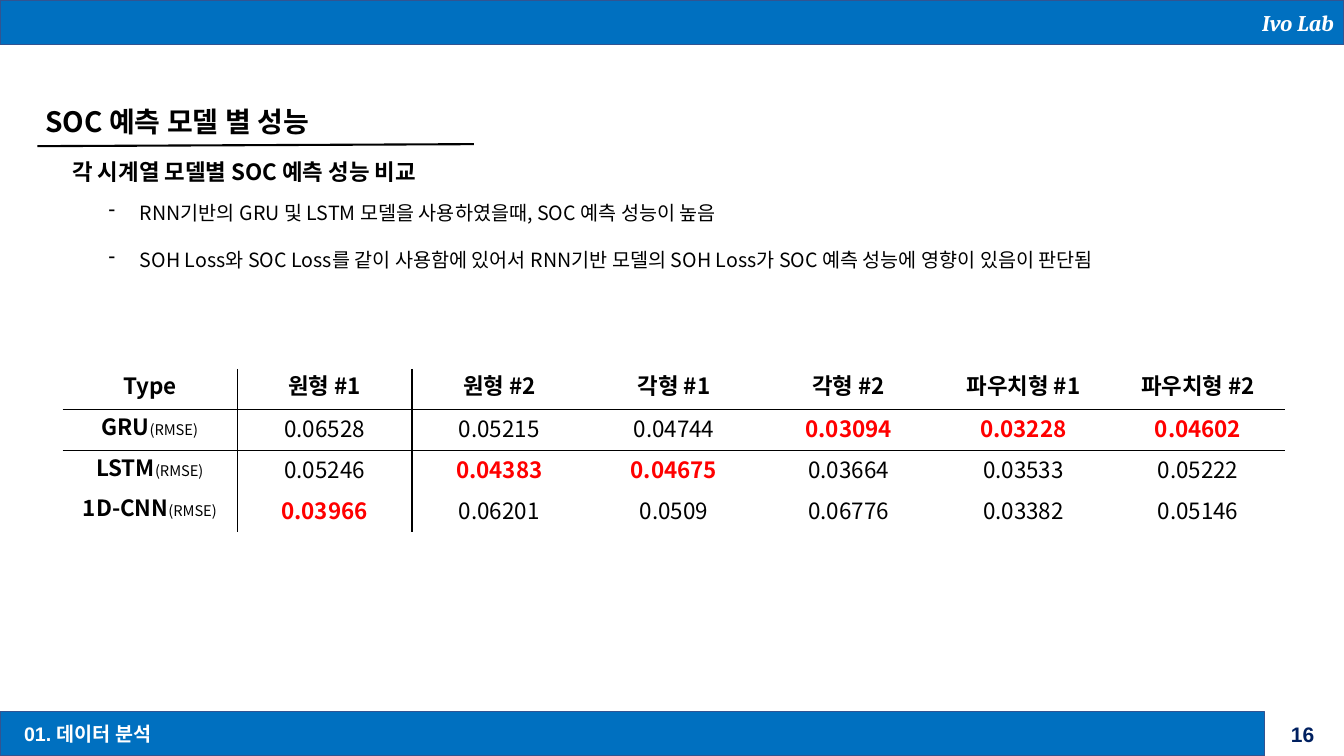
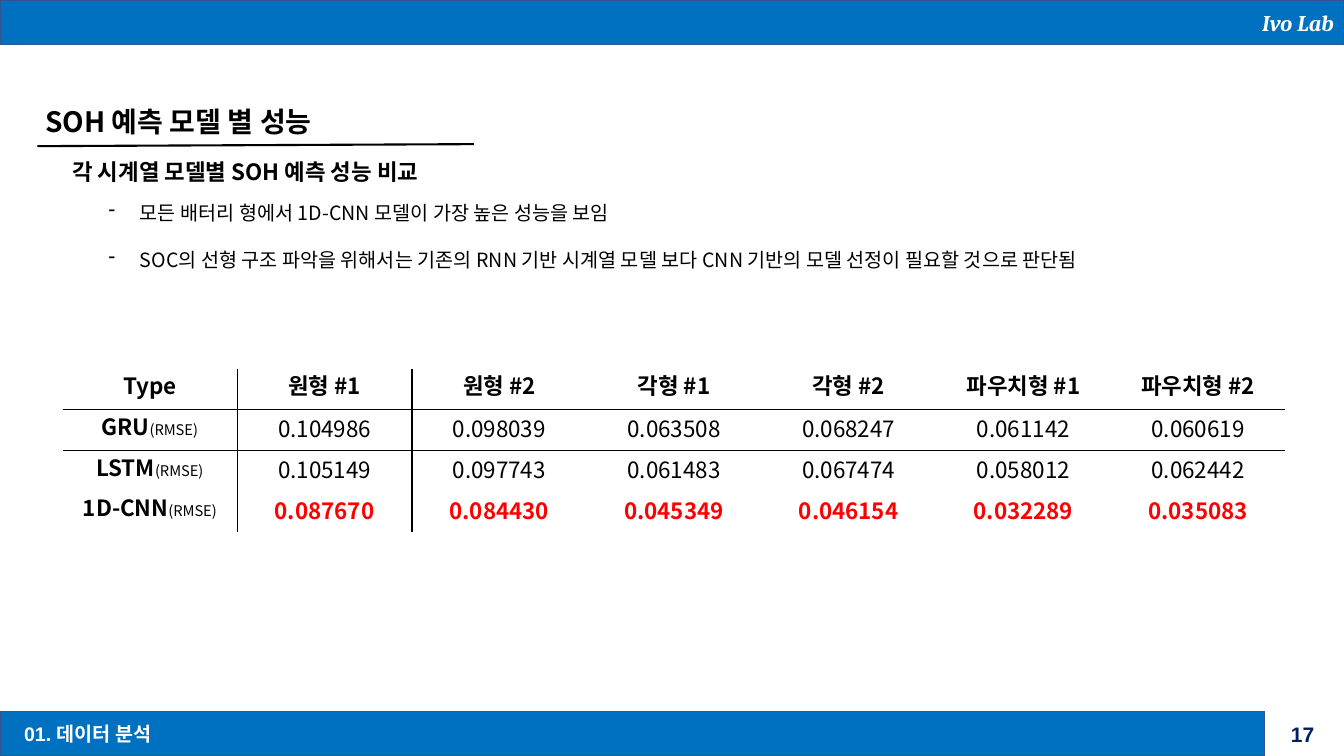
from lxml import etree
from pptx import Presentation
from pptx.dml.color import RGBColor
from pptx.enum.shapes import MSO_CONNECTOR, MSO_SHAPE
from pptx.enum.text import MSO_ANCHOR, PP_ALIGN
from pptx.oxml.ns import qn
from pptx.util import Inches, Pt

BLUE = RGBColor(0x00, 0x70, 0xC0)
BAND_EDGE = RGBColor(0x32, 0x54, 0x91)
NAVY = RGBColor(0x00, 0x20, 0x60)
BLACK = RGBColor(0x00, 0x00, 0x00)
WHITE = RGBColor(0xFF, 0xFF, 0xFF)
RED = RGBColor(0xFF, 0x00, 0x00)

BODY_FONT = "Noto Sans CJK KR"
LINE_HEIGHT = 1.2
NO_GRID_STYLE = "{2D5ABB26-0587-4C30-8999-92F81FD0307C}"

LAB = "Ivo Lab"
SECTION = "01. 데이터 분석"
METRIC = "(RMSE)"
HEADERS = ["Type", "원형 #1", "원형 #2", "각형 #1", "각형 #2", "파우치형 #1", "파우치형 #2"]

SLIDES = [
    {
        "page": 16,
        "title": "SOC 예측 모델 별 성능",
        "subtitle": "각 시계열 모델별 SOC 예측 성능 비교",
        "findings": [
            "RNN기반의 GRU 및 LSTM 모델을 사용하였을때, SOC 예측 성능이 높음",
            "SOH Loss와 SOC Loss를 같이 사용함에 있어서 RNN기반 모델의 SOH Loss가 SOC 예측 성능에 영향이 있음이 판단됨",
        ],
        "errors": {
            "GRU": ["0.06528", "0.05215", "0.04744", "0.03094", "0.03228", "0.04602"],
            "LSTM": ["0.05246", "0.04383", "0.04675", "0.03664", "0.03533", "0.05222"],
            "1D-CNN": ["0.03966", "0.06201", "0.0509", "0.06776", "0.03382", "0.05146"],
        },
    },
    {
        "page": 17,
        "title": "SOH 예측 모델 별 성능",
        "subtitle": "각 시계열 모델별 SOH 예측 성능 비교",
        "findings": [
            "모든 배터리 형에서 1D-CNN 모델이 가장 높은 성능을 보임",
            "SOC의 선형 구조 파악을 위해서는 기존의 RNN 기반 시계열 모델 보다 CNN 기반의 모델 선정이 필요할 것으로 판단됨",
        ],
        "errors": {
            "GRU": ["0.104986", "0.098039", "0.063508", "0.068247", "0.061142", "0.060619"],
            "LSTM": ["0.105149", "0.097743", "0.061483", "0.067474", "0.058012", "0.062442"],
            "1D-CNN": ["0.087670", "0.084430", "0.045349", "0.046154", "0.032289", "0.035083"],
        },
    },
]


def style(paragraph, size, color=BLACK, bold=False, name=BODY_FONT, align=PP_ALIGN.LEFT):
    paragraph.alignment = align
    paragraph.line_spacing = Pt(LINE_HEIGHT * size)
    font = paragraph.font
    font.size, font.bold, font.name = Pt(size), bold, name
    font.color.rgb = color
    defaults = paragraph._p.get_or_add_pPr().find(qn("a:defRPr"))
    etree.SubElement(defaults, qn("a:ea"), typeface=BODY_FONT)


def add_text(slide, box, lines, size, **look):
    frame = slide.shapes.add_textbox(*map(Inches, box)).text_frame
    frame.word_wrap = True
    frame.text = "\n".join(lines)
    for paragraph in frame.paragraphs:
        style(paragraph, size, **look)
    return frame


def add_band(slide, top, width):
    band = slide.shapes.add_shape(
        MSO_SHAPE.RECTANGLE, 0, Inches(top), Inches(width), Inches(0.44))
    band.shadow.inherit = False
    band.fill.solid()
    band.fill.fore_color.rgb = BLUE
    band.line.color.rgb = BAND_EDGE
    band.line.width = Pt(1)
    return band


def add_frame(slide, page):
    """Add the header band, footer band and page number."""
    header = add_band(slide, 0, 13.33).text_frame
    header.text = LAB
    header.vertical_anchor = MSO_ANCHOR.MIDDLE
    style(header.paragraphs[0], 16, WHITE, True, "Cambria", PP_ALIGN.RIGHT)
    header.paragraphs[0].font.italic = True
    add_band(slide, 7.06, 12.54)
    add_text(slide, (0.14, 7.11, 3, 0.34), [SECTION], 14,
             color=WHITE, bold=True, name="Arial")
    add_text(slide, (12.62, 7.11, 0.6, 0.35), [str(page)], 15,
             color=NAVY, bold=True, name="Arial", align=PP_ALIGN.CENTER)


def add_headings(slide, title, subtitle):
    add_text(slide, (0.35, 0.99, 8.62, 0.44), [title], 20, bold=True)
    underline = slide.shapes.add_connector(
        MSO_CONNECTOR.STRAIGHT, Inches(0.37), Inches(1.45), Inches(4.7), Inches(1.43))
    underline.line.color.rgb = BLACK
    underline.line.width = Pt(1.5)
    etree.SubElement(underline._element.spPr, qn("a:effectLst"))
    add_text(slide, (0.62, 1.52, 8, 0.37), [subtitle], 16, bold=True)


def add_findings(slide, findings):
    frame = add_text(slide, (0.98, 1.94, 12, 0.81), findings, 14)
    for index, paragraph in enumerate(frame.paragraphs):
        if index:
            paragraph.space_before = Pt(LINE_HEIGHT * 14)
        properties = paragraph._p.get_or_add_pPr()
        properties.set("marL", str(Inches(0.31)))
        properties.set("indent", str(-Inches(0.31)))
        dash = etree.Element(qn("a:buChar"), char="-")
        properties.find(qn("a:defRPr")).addprevious(dash)


def add_rule(cell, edge):
    line = etree.SubElement(cell._tc.get_or_add_tcPr(), qn(f"a:{edge}"), w=str(Pt(1)))
    fill = etree.SubElement(line, qn("a:solidFill"))
    etree.SubElement(fill, qn("a:srgbClr"), val=str(BLACK))


def fill_value(cell, value, best):
    cell.text = value
    cell.vertical_anchor = MSO_ANCHOR.MIDDLE
    cell.margin_left = cell.margin_right = cell.margin_top = Inches(0.01)
    cell.margin_bottom = 0
    style(cell.text_frame.paragraphs[0], 16, RED if best else BLACK, best,
          align=PP_ALIGN.CENTER)


def fill_label(cell, label, metric=""):
    cell.text = label
    paragraph = cell.text_frame.paragraphs[0]
    style(paragraph, 16, bold=True, align=PP_ALIGN.CENTER)
    if metric:
        run = paragraph.add_run()
        run.text = metric
        run.font.size, run.font.bold = Pt(10.5), False


def add_error_table(slide, errors):
    """Show the errors by model, with the lowest of each column in red."""
    rows, columns = len(errors) + 1, len(HEADERS)
    table = slide.shapes.add_table(
        rows, columns, Inches(0.62), Inches(3.66), Inches(12.13), Inches(1.62)).table
    table.first_row = table.horz_banding = False
    table._tbl.tblPr.find(qn("a:tableStyleId")).text = NO_GRID_STYLE

    for column, header in enumerate(HEADERS):
        fill_label(table.cell(0, column), header)
    lowest = [min(values, key=float) for values in zip(*errors.values())]
    for row, (model, values) in enumerate(errors.items(), 1):
        fill_label(table.cell(row, 0), model, METRIC)
        for column, (value, best) in enumerate(zip(values, lowest), 1):
            fill_value(table.cell(row, column), value, value == best)

    for row in range(rows):
        for column in range(columns):
            cell = table.cell(row, column)
            if column < 2:
                add_rule(cell, "lnR")
            if row < 2:
                add_rule(cell, "lnB")
            cell.fill.background()


def main():
    deck = Presentation()
    deck.slide_width, deck.slide_height = Inches(13.33), Inches(7.5)
    for content in SLIDES:
        slide = deck.slides.add_slide(deck.slide_layouts[6])
        add_frame(slide, content["page"])
        add_headings(slide, content["title"], content["subtitle"])
        add_findings(slide, content["findings"])
        add_error_table(slide, content["errors"])
    deck.save("out.pptx")


if __name__ == "__main__":
    main()
